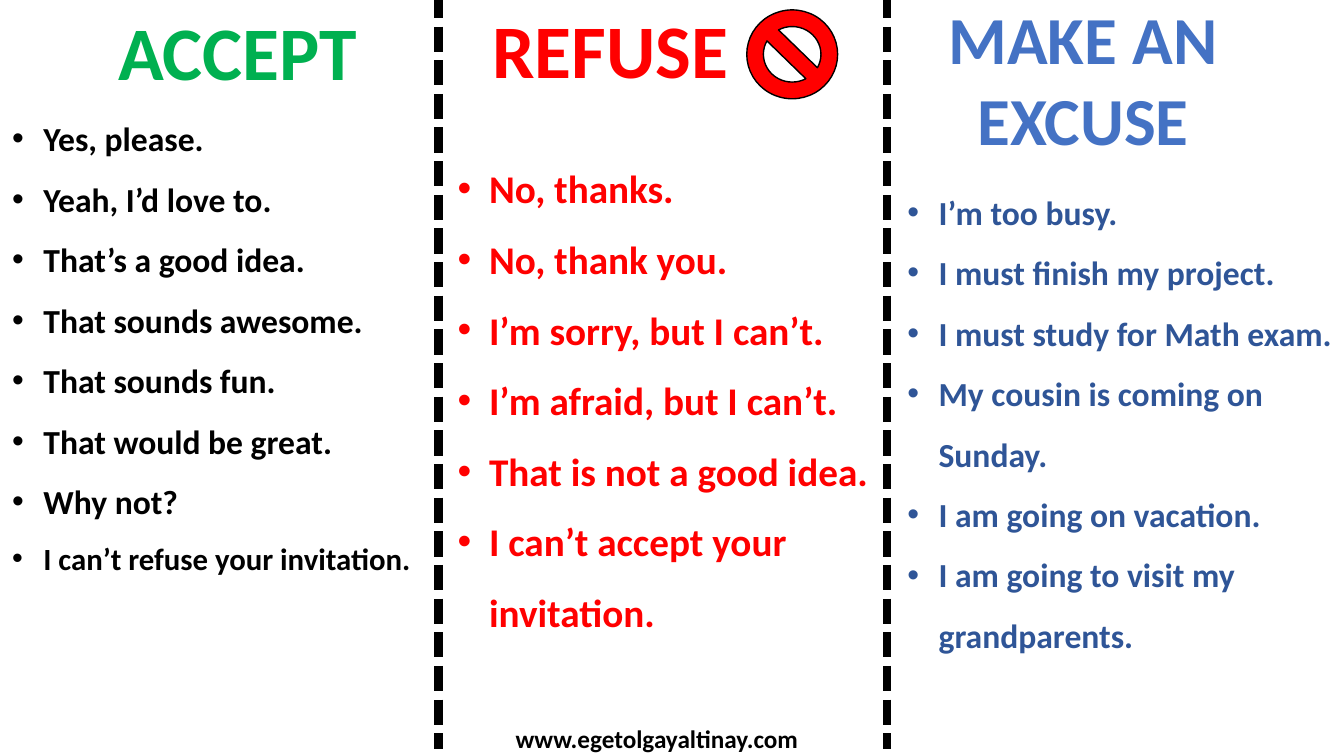
"""Builds a three-column slide of replies to an invitation."""
from lxml import etree
from pptx import Presentation
from pptx import util as u
from pptx.dml.color import RGBColor
from pptx.enum import dml, shapes, text
from pptx.oxml.ns import qn

COLUMNS = [
    {
        "heading": "ACCEPT", "heading_at": (2.69, 0, 6.6, 2.57), "look": "accept", "wrap": False,
        "list_at": (0.05, 2.34, 11.91, 12.42),
        "replies": ["Yes, please.", "Yeah, I’d love to.", "That’s a good idea.",
                    "That sounds awesome.", "That sounds fun.", "That would be great.",
                    "Why not?", "I can’t refuse your invitation."],
    },
    {
        "heading": "REFUSE", "heading_at": (12.12, -0.05, 6.53, 2.57), "look": "refuse", "wrap": False,
        "list_at": (11.28, 3.43, 11.61, 12.65),
        "replies": ["No, thanks.", "No, thank you.", "I’m sorry, but I can’t.",
                    "I’m afraid, but I can’t.", "That is not a good idea.",
                    "I can’t accept your invitation."],
    },
    {
        "heading": "MAKE AN EXCUSE", "heading_at": (23.37, -0.18, 7.85, 4.37), "look": "excuse", "wrap": True,
        "list_at": (22.61, 4.19, 11.61, 12.42),
        "replies": ["I’m too busy.", "I must finish my project.", "I must study for Math exam.",
                    "My cousin is coming on Sunday.", "I am going on vacation.",
                    "I am going to visit my grandparents."],
    },
]
WEBSITE = "www.egetolgayaltinay.com"
WEBSITE_AT = (11.68, 18.11, 9.75, 1.02)
SIGN_AT = (18.82, 0.25, 2.29, 2.24)
DIVIDERS = (11.05, 22.35)
DIVIDER_TOP, DIVIDER_BOTTOM = -0.18, 18.87
BULLET_INDENT = u.Cm(0.79)


class Theme:
    """Font, colours and type sizes."""
    font = "Calibri"
    black = "000000"
    red = "FF0000"
    heading = {"accept": ("00B050", 54), "refuse": (red, 54), "excuse": ("4472C4", 48)}
    replies = {"accept": (black, 24), "refuse": (red, 28), "excuse": ("2F5597", 24)}
    last_accept_size = 22
    website = (black, 18)


def place(box, at):
    """Move and size a box, given in centimetres."""
    box.left, box.top, box.width, box.height = map(u.Cm, at)


def add_bullet(para):
    """Give a paragraph a hanging round bullet."""
    props = para._p.get_or_add_pPr()
    props.set("marL", str(BULLET_INDENT))
    props.set("indent", str(-BULLET_INDENT))
    etree.SubElement(props, qn("a:buFont")).set("typeface", "Arial")
    etree.SubElement(props, qn("a:buChar")).set("char", "•")


def write(box, lines, *, color, size, last_size=None, bullets=False, wrap=True, spacing=1.0):
    """Fill a box with bold paragraphs."""
    frame = box.text_frame
    frame.word_wrap = wrap
    frame.auto_size = text.MSO_AUTO_SIZE.NONE
    frame.vertical_anchor = text.MSO_ANCHOR.TOP
    for number, line in enumerate(lines):
        para = frame.add_paragraph() if number else frame.paragraphs[0]
        para.line_spacing = spacing
        para.space_before = para.space_after = u.Pt(0)
        para.alignment = text.PP_ALIGN.LEFT if bullets else text.PP_ALIGN.CENTER
        if bullets:
            add_bullet(para)
        span = para.add_run()
        span.text = line
        is_last = number == len(lines) - 1
        span.font.size = u.Pt(last_size if is_last and last_size else size)
        span.font.name = Theme.font
        span.font.bold = True
        span.font.color.rgb = RGBColor.from_string(color)


def add_divider(page, x):
    """Draw a thick dashed vertical line."""
    line = page.shapes.add_connector(shapes.MSO_CONNECTOR.STRAIGHT, u.Cm(x), u.Cm(DIVIDER_TOP),
                                     u.Cm(x), u.Cm(DIVIDER_BOTTOM))
    line.line.color.rgb = RGBColor.from_string(Theme.black)
    line.line.width = u.Pt(6)
    line.line.dash_style = dml.MSO_LINE.SQUARE_DOT
    etree.SubElement(line._element.spPr, qn("a:effectLst"))


def add_sign(page):
    """Draw the red prohibition sign."""
    sign = page.shapes.add_shape(shapes.MSO_SHAPE.NO_SYMBOL, *map(u.Cm, SIGN_AT))
    sign.shadow.inherit = False
    sign.fill.solid()
    sign.fill.fore_color.rgb = RGBColor.from_string(Theme.red)
    sign.line.color.rgb = RGBColor.from_string(Theme.black)
    sign.line.width = u.Pt(1)


def main():
    """Build and save the slide."""
    deck = Presentation()
    deck.slide_width, deck.slide_height = u.Cm(33.87), u.Cm(19.05)
    page = deck.slides.add_slide(deck.slide_layouts.get_by_name("Comparison"))
    title, *bodies = page.placeholders
    for spare in bodies[len(COLUMNS):]:
        spare._element.getparent().remove(spare._element)

    for number, (column, body) in enumerate(zip(COLUMNS, bodies)):
        look = column["look"]
        heading = page.shapes.add_textbox(0, 0, 0, 0) if number else title
        place(heading, column["heading_at"])
        color, size = Theme.heading[look]
        write(heading, [column["heading"]], color=color, size=size, wrap=column["wrap"])
        place(body, column["list_at"])
        color, size = Theme.replies[look]
        write(body, column["replies"], color=color, size=size, bullets=True, spacing=1.5,
              last_size=Theme.last_accept_size if look == "accept" else None)

    add_sign(page)
    for x in DIVIDERS:
        add_divider(page, x)
    website = page.shapes.add_textbox(*map(u.Cm, WEBSITE_AT))
    color, size = Theme.website
    write(website, [WEBSITE], color=color, size=size)
    deck.save("out.pptx")


if __name__ == "__main__":
    main()
